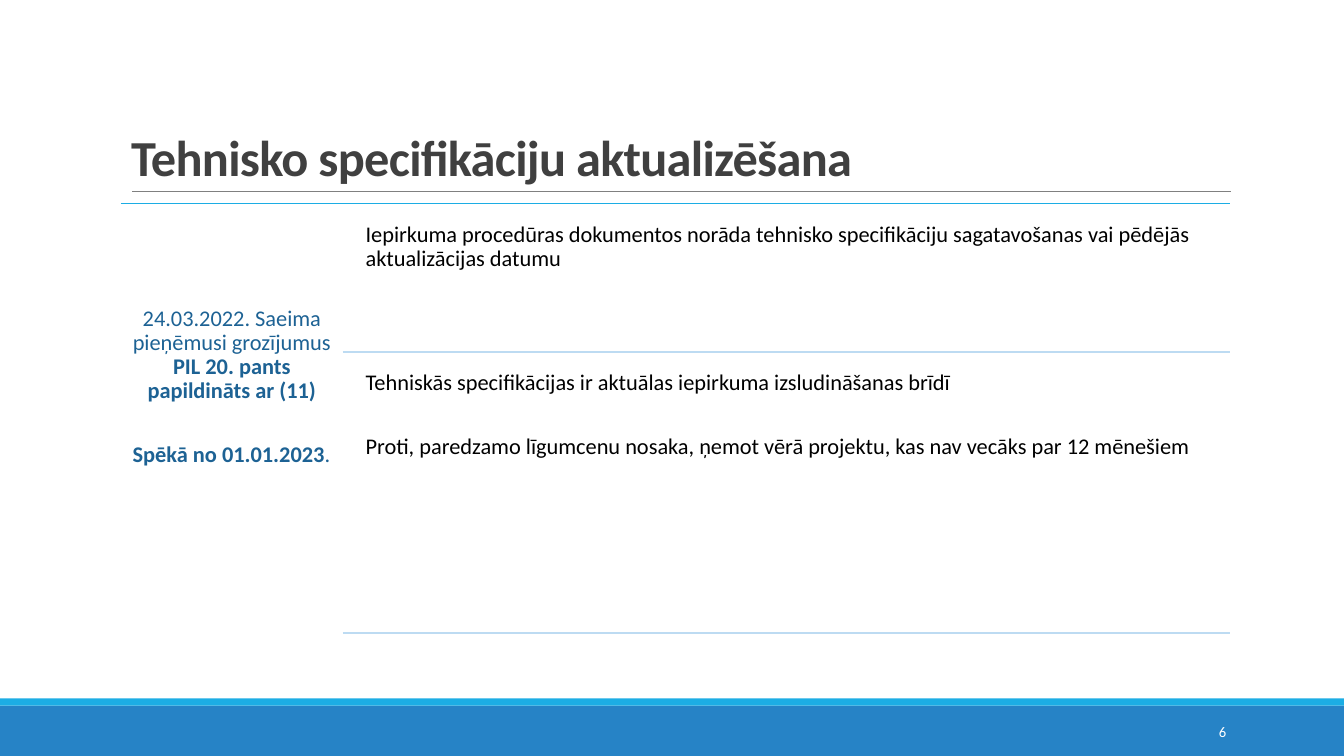
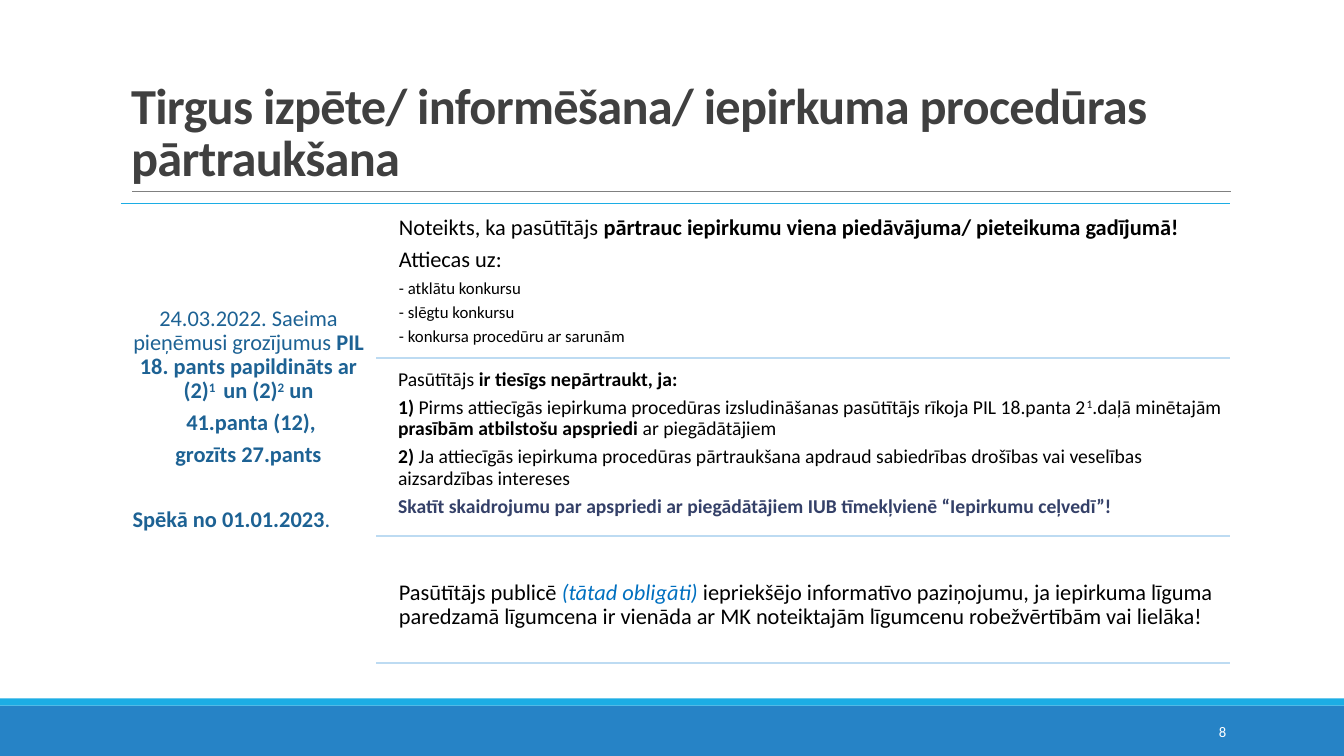
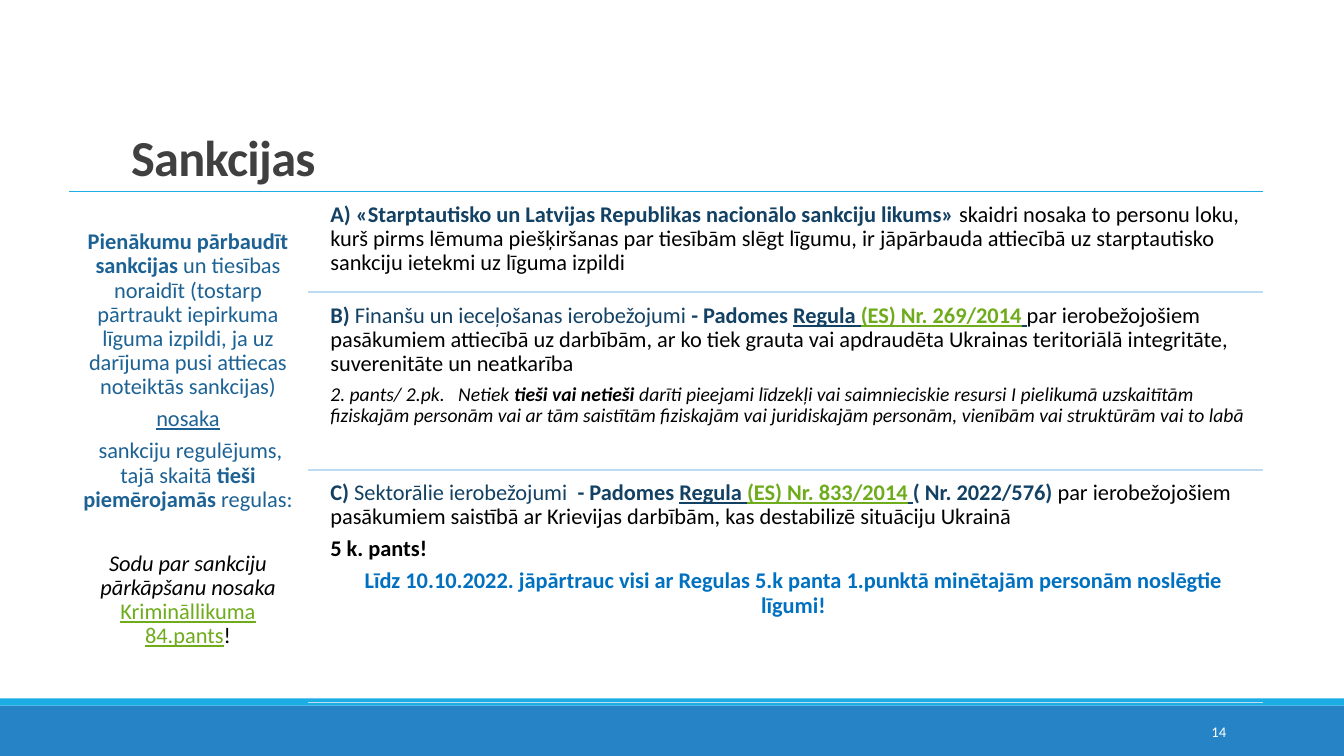
from collections import namedtuple

from lxml.etree import SubElement
from pptx import Presentation
from pptx.dml.color import RGBColor
from pptx.enum.shapes import MSO_CONNECTOR, MSO_SHAPE
from pptx.enum.text import MSO_ANCHOR, MSO_AUTO_SIZE, PP_ALIGN
from pptx.oxml.ns import qn
from pptx.util import Inches, Pt

FONT = "Calibri"
BLUE, CYAN, PALE, GREY = "2683C6", "1CADE4", "BDDBF2", "808080"
BLACK, WHITE, TITLE = "000000", "FFFFFF", "404040"
SIDE, NAVY, INDIGO, BRIGHT, GREEN = "1D6294", "134163", "344068", "0070C0", "6EAC1C"
LEFT, CENTER, RIGHT = PP_ALIGN.LEFT, PP_ALIGN.CENTER, PP_ALIGN.RIGHT
LINE_STEP = 0.32
SKIP = 22.9

Para = namedtuple("Para", "runs size align before")


def para(*runs, size=16, align=LEFT, before=0):
    return Para(runs, size, align, before)


def centred(*runs, before=0):
    return para(*runs, align=CENTER, before=before)


IN_FORCE = para((" Spēkā no 01.01.2023", "b"), ".", before=SKIP)

SLIDES = [
    {
        "number": "6",
        "title": "Tehnisko specifikāciju aktualizēšana",
        "left": 1.2, "right": 12.2, "top": 2.02, "side_width": 2.2, "row_gap": 0.13,
        "side_skip": 3, "side_bottom": 6.42,
        "side": [
            centred("24.03.2022. Saeima pieņēmusi grozījumus ",
                    ("PIL 20. pants papildināts ar (11)", "b")),
            IN_FORCE,
        ],
        "rows": [
            (3.49, 0, [para("Iepirkuma procedūras dokumentos norāda tehnisko specifikāciju "
                            "sagatavošanas vai pēdējās aktualizācijas datumu")]),
            (6.28, 0, [
                para("Tehniskās specifikācijas ir aktuālas iepirkuma izsludināšanas brīdī"),
                para("Proti, paredzamo līgumcenu nosaka, ņemot vērā projektu, "
                     "kas nav vecāks par 12 mēnešiem", before=SKIP),
            ]),
        ],
    },
    {
        "number": "8",
        "title": "Tirgus izpēte/ informēšana/ iepirkuma procedūras pārtraukšana",
        "left": 1.2, "right": 12.2, "top": 2.02, "side_width": 2.53, "row_gap": 0.06,
        "side_skip": 3, "side_bottom": 6.64,
        "side": [
            centred("24.03.2022. Saeima pieņēmusi grozījumus ",
                    ("PIL 18. pants papildināts ar (2)", "b"), ("1 ", "b^"),
                    (" un (2)", "b"), ("2", "b^"), (" un", "b")),
            centred((" 41.panta (12),", "b")),
            centred(("grozīts 27.pants", "b")),
            IN_FORCE,
        ],
        "rows": [
            (3.55, 0, [
                para("Noteikts, ka pasūtītājs ",
                     ("pārtrauc iepirkumu viena piedāvājuma/ pieteikuma gadījumā!", "b")),
                para("Attiecas uz:"),
                para("- atklātu konkursu", size=12),
                para("- slēgtu konkursu", size=12),
                para("- konkursa procedūru ar sarunām", size=12),
            ]),
            (5.32, 0, [
                para("Pasūtītājs ", ("ir tiesīgs nepārtraukt, ja:", "b"), size=14),
                para(("1) ", "b"),
                     "Pirms attiecīgās iepirkuma procedūras izsludināšanas pasūtītājs "
                     "rīkoja PIL 18.panta 2", ("1", "^"), ".daļā minētajām ",
                     ("prasībām atbilstošu apspriedi ", "b"), "ar piegādātājiem", size=14),
                para(("2) ", "b"),
                     "Ja attiecīgās iepirkuma procedūras pārtraukšana apdraud sabiedrības "
                     "drošības vai veselības aizsardzības intereses", size=14),
                para(("Skatīt skaidrojumu par apspriedi ar piegādātājiem IUB tīmekļvienē "
                      "“Iepirkumu ceļvedī”!", "b", INDIGO), size=14),
            ]),
            (6.58, 1, [
                para("Pasūtītājs publicē ", ("(tātad obligāti) ", "i", BRIGHT),
                     "iepriekšējo informatīvo paziņojumu, ja iepirkuma līguma paredzamā "
                     "līgumcena ir vienāda ar MK noteiktajām līgumcenu robežvērtībām "
                     "vai lielāka!"),
            ]),
        ],
    },
    {
        "number": "14",
        "title": "Sankcijas",
        "left": 0.68, "right": 12.53, "top": 1.9, "side_width": 2.37, "row_gap": 0.05,
        "side_skip": 1, "side_bottom": 7.03,
        "side": [
            centred(("Pienākumu pārbaudīt sankcijas ", "b"),
                    "un tiesības noraidīt (tostarp pārtraukt iepirkuma līguma izpildi, "
                    "ja uz darījuma pusi attiecas noteiktās sankcijas)"),
            centred(("nosaka", "u")),
            centred(" sankciju regulējums, tajā skaitā ", ("tieši piemērojamās", "b"),
                    " regulas:"),
            centred(("Sodu par sankciju pārkāpšanu nosaka ", "i", BLACK),
                    ("Krimināllikuma 84.pants", "u", GREEN), ("!", "", BLACK), before=SKIP),
        ],
        "rows": [
            (2.9, 0, [
                para(("A) «Starptautisko un Latvijas Republikas nacionālo sankciju likums» ",
                      "b", NAVY),
                     "skaidri nosaka to personu loku, kurš pirms lēmuma piešķiršanas par "
                     "tiesībām slēgt līgumu, ir jāpārbauda attiecībā uz starptautisko "
                     "sankciju ietekmi uz līguma izpildi"),
            ]),
            (4.66, 0, [
                para(("B) ", "b", NAVY), ("Finanšu un ieceļošanas ierobežojumi ", "", NAVY),
                     ("- Padomes ", "b", NAVY), ("Regula ", "bu", NAVY),
                     ("(ES) Nr. 269/2014", "bu", GREEN), (" ", "bu", NAVY),
                     "par ierobežojošiem pasākumiem attiecībā uz darbībām, ar ko tiek grauta "
                     "vai apdraudēta Ukrainas teritoriālā integritāte, suverenitāte un "
                     "neatkarība"),
                para(("2. pants/ 2.pk.   Netiek ", "i"), ("tieši vai netieši", "bi"),
                     (" darīti pieejami līdzekļi vai saimnieciskie resursi I pielikumā "
                      "uzskaitītām fiziskajām personām vai ar tām saistītām fiziskajām vai "
                      "juridiskajām personām, vienībām vai struktūrām vai to labā", "i"),
                     size=14),
            ]),
            (6.97, 0, [
                para(("C) ", "b", NAVY), ("Sektorālie ierobežojumi  ", "", NAVY),
                     ("- Padomes ", "b", NAVY), ("Regula ", "bu", NAVY),
                     ("(ES) Nr. 833/2014", "bu", GREEN), (" ", "bu", NAVY),
                     ("( Nr. 2022/576) ", "b", NAVY),
                     "par ierobežojošiem pasākumiem saistībā ar Krievijas darbībām, "
                     "kas destabilizē situāciju Ukrainā"),
                para(("5 k. pants!", "b")),
                centred(("Līdz 10.10.2022. jāpārtrauc visi ar Regulas 5.k panta 1.punktā "
                         "minētajām personām noslēgtie līgumi!", "b", BRIGHT)),
            ]),
        ],
    },
]


def rgb(value):
    return RGBColor.from_string(value)


def set_font(font, size, color, bold=False):
    font.name, font.size, font.bold = FONT, Pt(size), bold
    font.color.rgb = rgb(color)


def add_band(s, top, height, color):
    sp = s.shapes.add_shape(MSO_SHAPE.RECTANGLE, 0, Inches(top), prs.slide_width, Inches(height))
    sp.shadow.inherit = False
    sp.fill.solid()
    sp.fill.fore_color.rgb = rgb(color)
    sp.line.fill.background()
    return sp


def add_rule(s, left, right, y, color, width=1.25):
    line = s.shapes.add_connector(MSO_CONNECTOR.STRAIGHT, Inches(left), Inches(y),
                                  Inches(right), Inches(y))
    line.line.color.rgb = rgb(color)
    line.line.width = Pt(width)
    SubElement(line._element.spPr, qn("a:effectLst"))
    return line


def add_text(s, left, top, right, bottom, paras, color):
    box = s.shapes.add_textbox(Inches(left), Inches(top), Inches(right - left),
                               Inches(bottom - top))
    tf = box.text_frame
    tf.word_wrap = True
    inset = Inches(paras[0].size / 240)
    tf.margin_left = tf.margin_right = tf.margin_top = tf.margin_bottom = inset
    for i, item in enumerate(paras):
        p = tf.add_paragraph() if i else tf.paragraphs[0]
        p.alignment = item.align
        p.line_spacing = 0.9
        p.space_before = Pt(item.before)
        p.space_after = Pt(item.size * 0.35)
        for run in item.runs:
            text, flags, run_color = ((run,) if isinstance(run, str) else run) + ("", color)[
                (1 if isinstance(run, str) else len(run)) - 1:]
            r = p.add_run()
            r.text = text
            set_font(r.font, item.size, run_color, "b" in flags)
            r.font.italic = "i" in flags
            r.font.underline = "u" in flags
            if "^" in flags:
                r._r.get_or_add_rPr().set("baseline", "30000")


def add_title(s, text):
    tf = s.shapes.title.text_frame
    tf.text = text
    tf.word_wrap = True
    tf.auto_size = MSO_AUTO_SIZE.NONE
    tf.vertical_anchor = MSO_ANCHOR.BOTTOM
    p = tf.paragraphs[0]
    p.alignment = LEFT
    p.line_spacing = 0.85
    set_font(p.font, 36, TITLE, True)
    p.runs[0]._r.get_or_add_rPr().set("spc", "-50")


def add_number(s, number):
    box = s.shapes.add_textbox(Inches(10.83), Inches(7.06), Inches(1.43), Inches(0.4))
    tf = box.text_frame
    tf.text = number
    tf.word_wrap = True
    tf.vertical_anchor = MSO_ANCHOR.MIDDLE
    p = tf.paragraphs[0]
    p.alignment = RIGHT
    set_font(p.font, 10.5, WHITE)


def add_shared_parts(s, layout):
    title = layout.placeholders[0]
    title.left, title.top = Inches(1.2), Inches(0.31)
    title.width, title.height = Inches(11), Inches(1.59)
    parts = [add_band(s, 7, 0.5, BLUE), add_band(s, 6.93, 0.07, CYAN),
             add_rule(s, 1.31, 12.21, 1.9, GREY, 0.5)]
    for shape_id, part in enumerate(parts, 20):
        part._element.xpath(".//p:cNvPr")[0].set("id", str(shape_id))
        layout.shapes._spTree.append(part._element)


def add_content(s, data):
    left, right, top = data["left"], data["right"], data["top"]
    split = left + data["side_width"]
    add_rule(s, left, right, top, CYAN)
    add_text(s, left, top + data["side_skip"] * LINE_STEP, split, data["side_bottom"],
             data["side"], SIDE)
    for bottom, skip, paras in data["rows"]:
        text_top = top + data["row_gap"] + skip * LINE_STEP
        add_text(s, split + 0.16, text_top, right, bottom, paras, BLACK)
        add_rule(s, split, right, bottom, PALE)
        top = bottom


prs = Presentation()
prs.slide_width, prs.slide_height = Inches(13.33), Inches(7.5)
layout = prs.slide_layouts[5]
for i, data in enumerate(SLIDES):
    s = prs.slides.add_slide(layout)
    if i == 0:
        add_shared_parts(s, layout)
    add_title(s, data["title"])
    add_content(s, data)
    add_number(s, data["number"])
prs.save("out.pptx")
